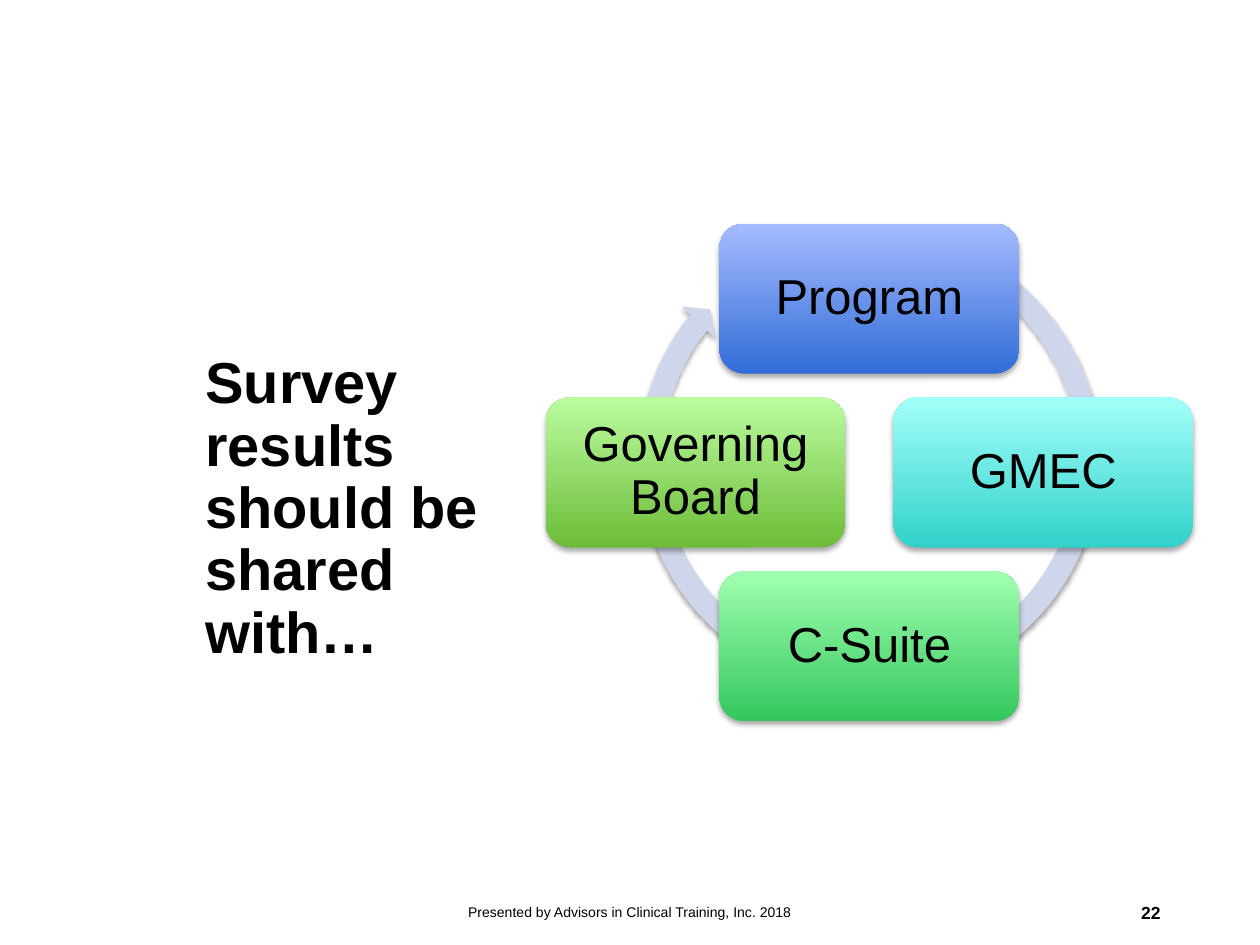
import math
from dataclasses import dataclass

import lxml.etree
import pptx
import pptx.dml.color
import pptx.enum.shapes
import pptx.enum.text
import pptx.oxml.ns
import pptx.util

Inches = pptx.util.Inches
Pt = pptx.util.Pt
RGBColor = pptx.dml.color.RGBColor
MSO_SHAPE = pptx.enum.shapes.MSO_SHAPE
MSO_ANCHOR = pptx.enum.text.MSO_ANCHOR
PP_ALIGN = pptx.enum.text.PP_ALIGN


@dataclass(frozen=True)
class Theme:
    font: str = "Arial"
    text: str = "000000"
    ring: str = "CFD5EA"
    blue: tuple = ("316DD7", "A6BBFF")
    teal: tuple = ("31D1CA", "A3FFFA")
    green: tuple = ("34C75D", "A0FFB1")
    lime: tuple = ("6DBC38", "BBFCA0")
    title_size: int = 33
    box_size: int = 28
    number_size: int = 10
    footer_size: int = 8


theme = Theme()


def write_text(shape, text, size, bold=False, align=PP_ALIGN.LEFT,
               line_spacing=1.0, inset_x=0.1, inset_y=0.1):
    frame = shape.text_frame
    frame.word_wrap = True
    frame.auto_size = pptx.enum.text.MSO_AUTO_SIZE.NONE
    frame.vertical_anchor = MSO_ANCHOR.MIDDLE
    frame.margin_left = frame.margin_right = Inches(inset_x)
    frame.margin_top = frame.margin_bottom = Inches(inset_y)
    frame.text = text
    paragraph = frame.paragraphs[0]
    paragraph.alignment = align
    paragraph.line_spacing = line_spacing
    paragraph.space_before = Pt(0)
    font = paragraph.runs[0].font
    font.name, font.size, font.bold = theme.font, Pt(size), bold
    font.color.rgb = RGBColor.from_string(theme.text)


def add_soft_shadow(shape):
    """Replace the theme shadow by a short one falling straight down."""
    shape.shadow.inherit = False
    effects = shape._element.spPr.find(pptx.oxml.ns.qn("a:effectLst"))
    shadow = lxml.etree.SubElement(
        effects, pptx.oxml.ns.qn("a:outerShdw"), blurRad=str(Pt(3.1)),
        dist=str(Pt(1.8)), dir="5400000", rotWithShape="0")
    color = lxml.etree.SubElement(shadow, pptx.oxml.ns.qn("a:srgbClr"), val="000000")
    lxml.etree.SubElement(color, pptx.oxml.ns.qn("a:alpha"), val="35000")


presentation = pptx.Presentation()
presentation.slide_width = Inches(10)
presentation.slide_height = Inches(7.5)
slide = presentation.slides.add_slide(presentation.slide_layouts[5])

# Title
title = slide.shapes.title
title.left, title.top = Inches(1.56), Inches(1.79)
title.width, title.height = Inches(2.76), Inches(4.51)
write_text(title, "Survey results should be shared with…", theme.title_size,
           bold=True, line_spacing=0.9, inset_x=0.07, inset_y=0.04)

# Ring behind the cycle
ring = slide.shapes.add_shape(MSO_SHAPE.CIRCULAR_ARROW, Inches(4.98), Inches(1.72),
                              Inches(3.85), Inches(3.85))
for index, value in enumerate((0.047, 2.729, 131.158, 178.401, 0.048)):
    ring.adjustments[index] = value
ring.fill.solid()
ring.fill.fore_color.rgb = RGBColor.from_string(theme.ring)
ring.line.fill.background()
add_soft_shadow(ring)

# Four boxes, clockwise from the top
center_x, center_y, radius = 6.9, 3.75, 1.38
box_width, box_height = 2.38, 1.19
audiences = [
    ("Program", theme.blue),
    ("GMEC", theme.teal),
    ("C-Suite", theme.green),
    ("Governing Board", theme.lime),
]
for index, (name, colors) in enumerate(audiences):
    angle = 2 * math.pi * index / len(audiences)
    left = center_x + radius * math.sin(angle) - box_width / 2
    top = center_y - radius * math.cos(angle) - box_height / 2
    box = slide.shapes.add_shape(MSO_SHAPE.ROUNDED_RECTANGLE, Inches(left), Inches(top),
                                 Inches(box_width), Inches(box_height))
    box.fill.gradient()
    box.fill.gradient_angle = 90
    for stop, position, color in zip(box.fill.gradient_stops, (0, 1), colors):
        stop.position = position
        stop.color.rgb = RGBColor.from_string(color)
    box.line.fill.background()
    add_soft_shadow(box)
    write_text(box, name, theme.box_size, align=PP_ALIGN.CENTER, line_spacing=0.9,
               inset_x=0.12, inset_y=0.12)

# Footer and slide number
footer = slide.shapes.add_textbox(Inches(3.31), Inches(7.04), Inches(3.38), Inches(0.4))
write_text(footer, "Presented by Advisors in Clinical Training, Inc. 2018",
           theme.footer_size, align=PP_ALIGN.CENTER)
number = slide.shapes.add_textbox(Inches(7.06), Inches(7.04), Inches(2.25), Inches(0.4))
write_text(number, "22", theme.number_size, bold=True, align=PP_ALIGN.RIGHT, inset_y=0.05)

presentation.save("out.pptx")
